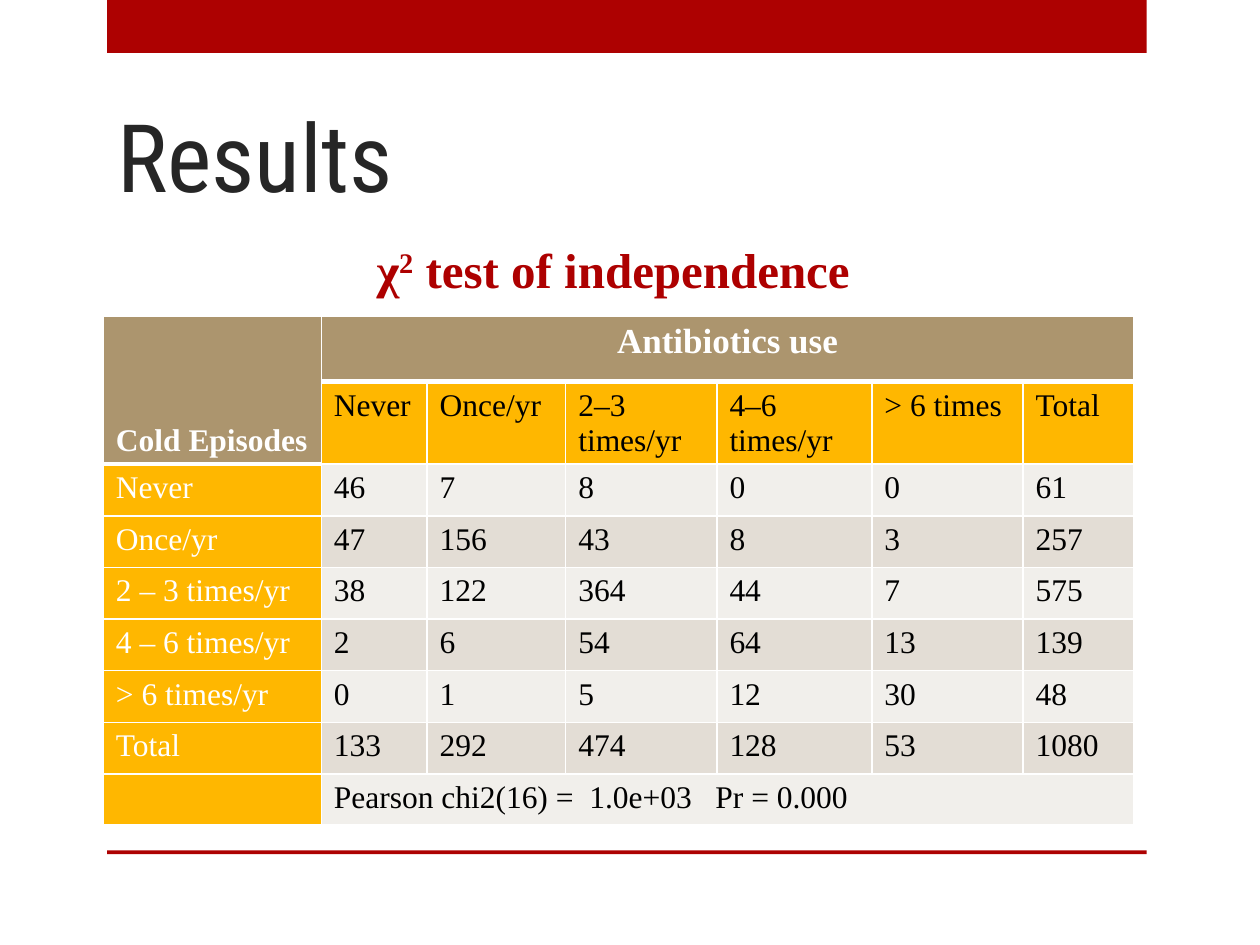
from lxml.etree import SubElement
from pptx import Presentation
from pptx.dml.color import RGBColor
from pptx.enum.shapes import MSO_SHAPE as Shape
from pptx.enum.text import MSO_ANCHOR as Anchor, MSO_AUTO_SIZE as AutoSize, PP_ALIGN as Align
from pptx.oxml.ns import qn
from pptx.util import Inches, Pt

# Colours and fonts
RED = RGBColor(0xAD, 0x01, 0x01)
HEADING_RED = RGBColor(0xAD, 0x00, 0x00)
CHARCOAL = RGBColor(0x26, 0x26, 0x26)
TAN = RGBColor(0xAC, 0x95, 0x6E)
AMBER = RGBColor(0xFF, 0xB7, 0x00)
BANDS = RGBColor(0xF1, 0xEF, 0xEB), RGBColor(0xE3, 0xDD, 0xD5)
WHITE = RGBColor(0xFF, 0xFF, 0xFF)
BLACK = RGBColor(0x00, 0x00, 0x00)
SERIF = "Times New Roman"

# Content
TITLE = "Results"
HEADING = [("χ", 0), ("2", 30), (" test of independence ", 0)]
ROWS = [
    ["Cold Episodes", "Antibiotics use", "", "", "", "", ""],
    ["", "Never", "Once/yr", "2–3 times/yr", "4–6 times/yr", "> 6 times", "Total"],
    ["Never", 46, 7, 8, 0, 0, 61],
    ["Once/yr", 47, 156, 43, 8, 3, 257],
    ["2 – 3 times/yr", 38, 122, 364, 44, 7, 575],
    ["4 – 6 times/yr", 2, 6, 54, 64, 13, 139],
    ["> 6 times/yr", 0, 1, 5, 12, 30, 48],
    ["Total", 133, 292, 474, 128, 53, 1080],
    ["", "Pearson chi2(16) =  1.0e+03   Pr = 0.000", "", "", "", "", ""],
]
COLUMN_WIDTHS = [1.73, 0.84, 1.1, 1.2, 1.23, 1.2, 0.88]
ROW_HEIGHTS = [0.52] + [0.41] * 7 + [0.2]
MERGES = [((0, 0), (1, 0)), ((0, 1), (0, 6)), ((8, 1), (8, 6))]
BARS = [(0, 0.42), (6.75, 0.03)]  # top, height


def add_text(para, text, font=SERIF, size=18, color=BLACK, bold=False, align=Align.LEFT, raised=0):
    para.alignment = align
    span = para.add_run()
    span.text = text
    span.font.name, span.font.size, span.font.bold = font, Pt(size), bold
    span.font.color.rgb = color
    if raised:
        span._r.get_or_add_rPr().set("baseline", str(raised * 1000))


def set_borders(cell, widths):
    """Draw white borders; widths are points for left, right, top, bottom."""
    properties = cell._tc.get_or_add_tcPr()
    for place, (side, width) in enumerate(zip("LRTB", widths)):
        line = SubElement(properties, qn(f"a:ln{side}"), w=str(Pt(width)))
        fill = SubElement(line, qn("a:solidFill"))
        SubElement(fill, qn("a:srgbClr"), val=str(WHITE))
        properties.insert(place, line)


def ends_header(row, column):
    return row == (1 if column == 0 else 0)


def cell_fill(row, column):
    if row == 0 or (row == 1 and column == 0):
        return TAN
    return AMBER if row == 1 or column == 0 else BANDS[row % 2]


deck = Presentation()
deck.slide_width, deck.slide_height = Inches(10), Inches(7.5)
page = deck.slides.add_slide(deck.slide_layouts[5])

# Red bars at the top and foot
for top, height in BARS:
    bar = page.shapes.add_shape(Shape.RECTANGLE, Inches(0.85), Inches(top), Inches(8.25), Inches(height))
    bar.shadow.inherit = False
    bar.fill.solid()
    bar.fill.fore_color.rgb = RED
    bar.line.fill.background()

# Title
title = page.shapes.title
title.left, title.top, title.width, title.height = map(Inches, (0.83, 0.38, 7.42, 1.35))
title.text_frame.vertical_anchor = Anchor.BOTTOM
title.text_frame.auto_size = AutoSize.NONE
add_text(title.text_frame.paragraphs[0], TITLE, font="Roboto Condensed", size=54, color=CHARCOAL)

# Table of cold episodes by antibiotics use
table = page.shapes.add_table(len(ROWS), len(COLUMN_WIDTHS), Inches(0.82), Inches(2.51),
                              Inches(8.18), Inches(sum(ROW_HEIGHTS))).table
table.horz_banding = False
for column, width in zip(table.columns, COLUMN_WIDTHS):
    column.width = Inches(width)
for row, height in zip(table.rows, ROW_HEIGHTS):
    row.height = Inches(height)
for first, last in MERGES:
    table.cell(*first).merge(table.cell(*last))

for r, values in enumerate(ROWS):
    for c, value in enumerate(values):
        cell = table.cell(r, c)
        cell.fill.solid()
        cell.fill.fore_color.rgb = cell_fill(r, c)
        set_borders(cell, (1, 1, 3 if ends_header(r - 1, c) else 1, 3 if ends_header(r, c) else 1))
        if value != "":
            spanning = (r, c) == (0, 1)
            add_text(cell.text_frame.paragraphs[0], str(value), size=20 if spanning else 18,
                     color=WHITE if r == 0 or c == 0 else BLACK, bold=r == 0,
                     align=Align.CENTER if spanning else Align.LEFT)
table.cell(0, 0).vertical_anchor = Anchor.BOTTOM

# Heading above the table
box = page.shapes.add_textbox(Inches(0.83), Inches(1.85), Inches(8.17), Inches(0.57))
box.text_frame.word_wrap = True
box.text_frame.auto_size = AutoSize.SHAPE_TO_FIT_TEXT
for text, raised in HEADING:
    add_text(box.text_frame.paragraphs[0], text, size=28, color=HEADING_RED, bold=True,
             align=Align.CENTER, raised=raised)

deck.save("out.pptx")
